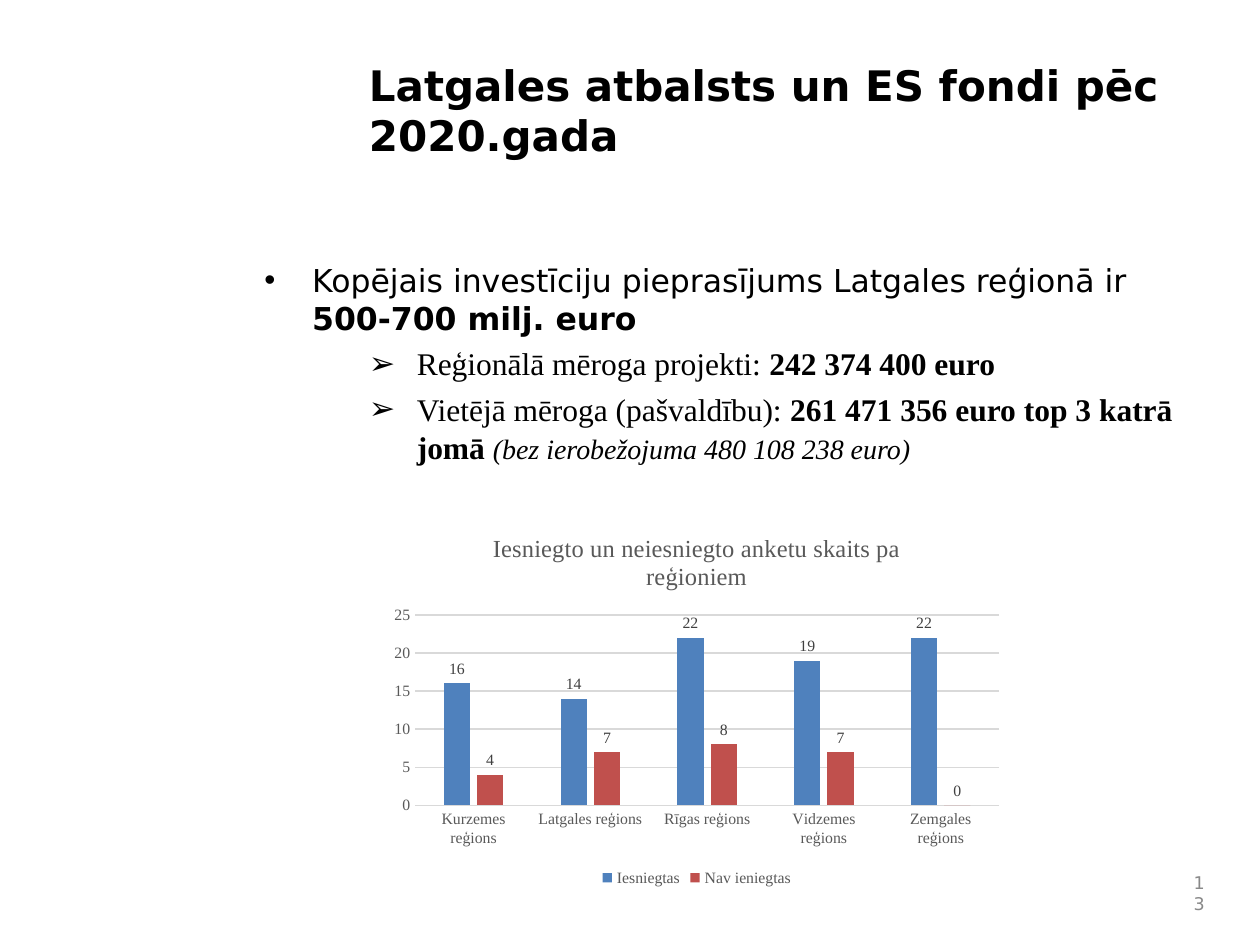
from pptx import Presentation
from pptx.chart.data import CategoryChartData
from pptx.dml.color import RGBColor
from pptx.enum.chart import XL_CHART_TYPE as CT, XL_LABEL_POSITION as LP
from pptx.enum.chart import XL_LEGEND_POSITION as LEG, XL_TICK_MARK as TICK
from pptx.enum.text import MSO_ANCHOR, PP_ALIGN
from pptx.oxml.ns import qn
from pptx.util import Inches, Pt
from lxml import etree

COLORS = {"text": "000000", "number": "898989", "chart": "595959", "label": "404040",
          "grid": "D9D9D9", "submitted": "4F81BD", "missing": "C0504D"}
SANS, SERIF = "DejaVu Sans", "Times New Roman"


def rgb(name):
    return RGBColor.from_string(COLORS[name])


def set_font(font, color="text", **fmt):
    for key, value in fmt.items():
        setattr(font, key, value)
    font.color.rgb = rgb(color)


def add_text(slide, box, anchor=MSO_ANCHOR.TOP):
    tf = slide.shapes.add_textbox(*map(Inches, box)).text_frame
    tf.word_wrap = True
    tf.vertical_anchor = anchor
    return tf


def add_run(p, text, color="text", **fmt):
    r = p.add_run()
    r.text = text
    set_font(r.font, color, **fmt)


def set_bullet(p, char, left, hanging):
    pPr = p._p.get_or_add_pPr()
    pPr.set("marL", str(Inches(left)))
    pPr.set("indent", str(-Inches(hanging)))
    etree.SubElement(pPr, qn("a:buFont")).set("typeface", "Arial")
    etree.SubElement(pPr, qn("a:buChar")).set("char", char)


def add_title(slide, box):
    p = add_text(slide, box).paragraphs[0]
    add_run(p, "Latgales atbalsts un ES fondi pēc 2020.gada",
            name=SANS, size=Pt(24), bold=True)


def add_body(slide, box):
    bold, note = {"bold": True}, {"italic": True, "size": Pt(16)}
    items = [
        ("•", 0.38, SANS, [("Kopējais investīciju pieprasījums Latgales reģionā ir ", {}),
                           ("500-700 milj. euro", bold)]),
        ("➢", 1.21, SERIF, [("Reģionālā mēroga projekti: ", {}),
                            ("242 374 400 euro", bold)]),
        ("➢", 1.21, SERIF, [("Vietējā mēroga (pašvaldību): ", {}),
                            ("261 471 356 euro top 3 katrā jomā ", bold),
                            ("(bez ierobežojuma 480 108 238 euro)", note)]),
    ]
    tf = add_text(slide, box)
    for i, (char, left, font, runs) in enumerate(items):
        p = tf.add_paragraph() if i else tf.paragraphs[0]
        if i:
            p.space_before = Pt(4.5)
        set_bullet(p, char, left, 0.38)
        for text, fmt in runs:
            add_run(p, text, **{"name": font, "size": Pt(18), **fmt})


def add_number(slide, box):
    p = add_text(slide, box, MSO_ANCHOR.MIDDLE).paragraphs[0]
    p.alignment = PP_ALIGN.RIGHT
    add_run(p, "13", "number", name=SANS, size=Pt(10))


def add_survey_chart(slide, box):
    data = CategoryChartData()
    data.categories = [f"{region} reģions" for region in
                       ("Kurzemes", "Latgales", "Rīgas", "Vidzemes", "Zemgales")]
    data.add_series("Iesniegtas", (16, 14, 22, 19, 22))
    data.add_series("Nav ieniegtas", (4, 7, 8, 7, 0))
    chart = slide.shapes.add_chart(CT.COLUMN_CLUSTERED, *map(Inches, box), data).chart
    small = {"name": SERIF, "size": Pt(9)}
    set_font(chart.font, name=SERIF, size=Pt(10))

    # Title and legend
    chart.has_title = True
    chart.chart_title.include_in_layout = False
    add_run(chart.chart_title.text_frame.paragraphs[0],
            "Iesniegto un neiesniegto anketu skaits pa reģioniem",
            "chart", name=SERIF, size=Pt(14), bold=False)
    chart.has_legend = True
    chart.legend.position = LEG.BOTTOM
    chart.legend.include_in_layout = False
    set_font(chart.legend.font, "chart", **small)

    # Axes
    cat, val = chart.category_axis, chart.value_axis
    for axis in (cat, val):
        axis.major_tick_mark = axis.minor_tick_mark = TICK.NONE
        set_font(axis.tick_labels.font, "chart", **small)
    for line in (cat.format.line, val.major_gridlines.format.line):
        line.color.rgb = rgb("grid")
        line.width = Pt(0.75)
    val.format.line.fill.background()
    val.minimum_scale, val.maximum_scale, val.major_unit = 0, 25, 5

    # Columns and their labels
    plot = chart.plots[0]
    plot.gap_width, plot.overlap, plot.vary_by_categories = 219, -27, False
    for series, color in zip(plot.series, ("submitted", "missing")):
        series.format.fill.solid()
        series.format.fill.fore_color.rgb = rgb(color)
        labels = series.data_labels
        labels.show_value = True
        labels.position = LP.OUTSIDE_END
        set_font(labels.font, "label", **small)


def main():
    prs = Presentation()
    prs.slide_width, prs.slide_height = Inches(10), Inches(7.5)
    slide = prs.slides.add_slide(prs.slide_layouts[6])
    add_title(slide, (2.83, 0.42, 6.67, 1.13))
    add_body(slide, (2, 2.02, 7.67, 4.42))
    add_number(slide, (9.33, 6.92, 0.33, 0.33))
    add_survey_chart(slide, (3.03, 4.08, 5, 3))
    prs.save("out.pptx")


if __name__ == "__main__":
    main()
